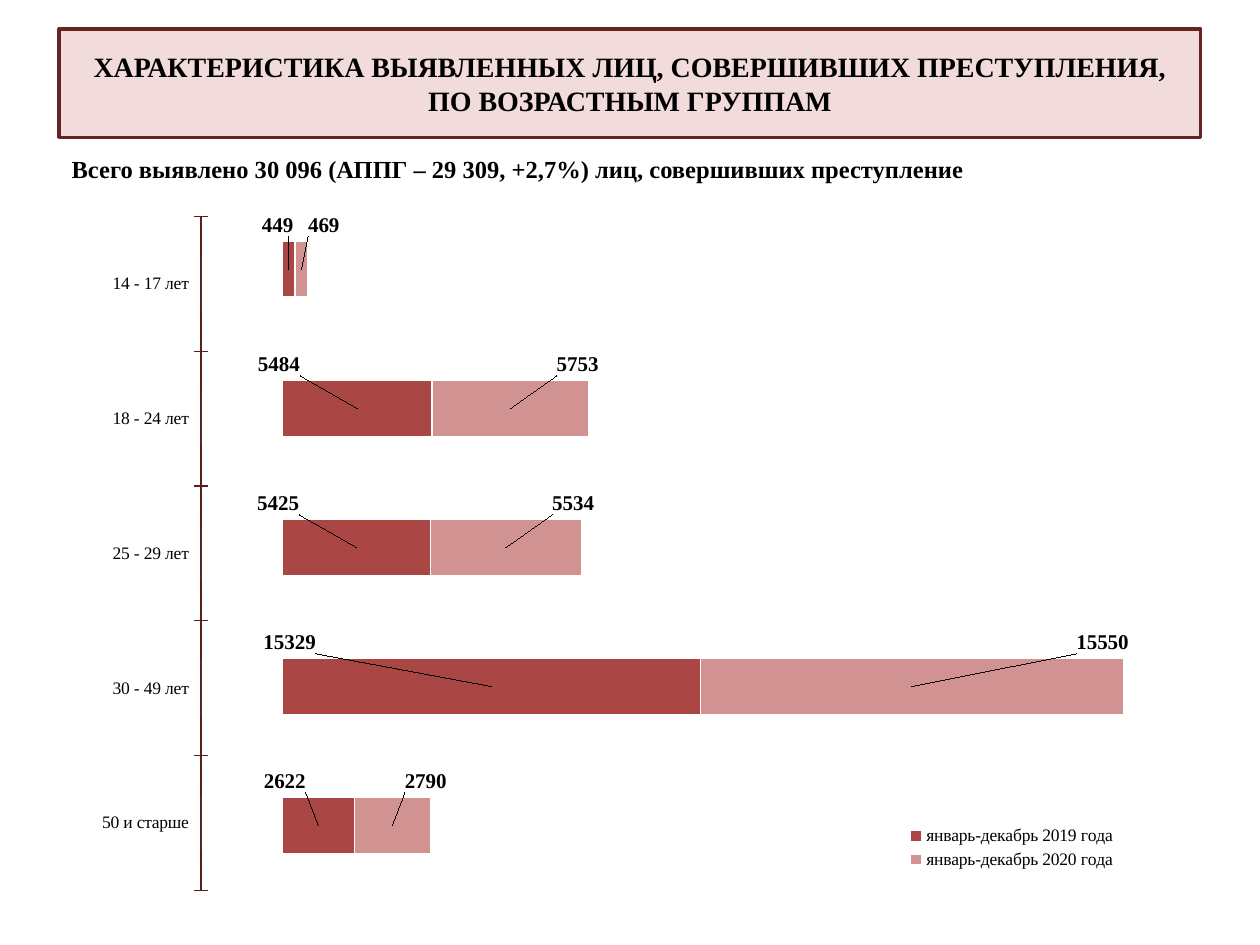
from lxml import etree
from pptx import Presentation
from pptx.chart.data import CategoryChartData
from pptx.dml.color import RGBColor
from pptx.enum.chart import XL_CHART_TYPE, XL_LEGEND_POSITION, XL_TICK_MARK
from pptx.enum.text import MSO_ANCHOR, MSO_AUTO_SIZE, PP_ALIGN
from pptx.oxml.ns import qn
from pptx.util import Inches, Pt

BAR = XL_CHART_TYPE.BAR_STACKED
RIGHT = XL_LEGEND_POSITION.RIGHT
CROSS = XL_TICK_MARK.CROSS
NONE = XL_TICK_MARK.NONE
MIDDLE = MSO_ANCHOR.MIDDLE
FIXED = MSO_AUTO_SIZE.NONE
CENTER = PP_ALIGN.CENTER
LEFT = PP_ALIGN.LEFT

COLORS = {
    "panel": "F2DCDB", "edge": "632523", "axis": "57201F", "text": "000000",
    "white": "FFFFFF", "past": "AA4643", "now": "D19392",
}
AGES = ["50 и старше", "30 - 49 лет", "25 - 29 лет", "18 - 24 лет", "14 - 17 лет"]
YEARS = [
    ("январь-декабрь 2019 года", [2622, 15329, 5425, 5484, 449], "past",
     [-0.03, -0.18, -0.07, -0.07, -0.01]),
    ("январь-декабрь 2020 года", [2790, 15550, 5534, 5753, 469], "now",
     [0.03, 0.17, 0.06, 0.06, 0.02]),
]
LIFT = -0.06


def color(name):
    return RGBColor.from_string(COLORS[name])


def layout(modes, frame):
    box = etree.Element(qn("c:layout"))
    manual = etree.SubElement(box, qn("c:manualLayout"))
    for key, val in {**modes, **dict(zip("xywh", frame))}.items():
        etree.SubElement(manual, qn(f"c:{key}"), val=str(val))
    return box


def clear():
    props = etree.Element(qn("c:spPr"))
    etree.SubElement(props, qn("a:noFill"))
    line = etree.SubElement(props, qn("a:ln"))
    etree.SubElement(line, qn("a:noFill"))
    return props


class Page:
    face = "Times New Roman"
    edges = {"xMode": "edge", "yMode": "edge"}
    inner = {"layoutTarget": "inner", **edges}

    def __init__(self, deck):
        self.slide = deck.slides.add_slide(deck.slide_layouts[5])

    def font(self, font, size, bold=False):
        for key, val in {"name": self.face, "size": Pt(size), "bold": bold}.items():
            setattr(font, key, val)
        font.color.rgb = color("text")

    def label(self, shape, text, size, align, after=0):
        frame = shape.text_frame
        frame.word_wrap = True
        frame.auto_size = FIXED
        para = frame.paragraphs[0]
        for key, val in {"alignment": align, "space_after": Pt(after)}.items():
            setattr(para, key, val)
        run = para.add_run()
        run.text = text
        self.font(run.font, size, True)
        return frame

    def title(self, text, *area):
        shape = self.slide.shapes.title
        for key, val in zip(("left", "top", "width", "height"), area):
            setattr(shape, key, Inches(val))
        geom = etree.SubElement(shape._element.spPr, qn("a:prstGeom"), prst="roundRect")
        etree.SubElement(geom, qn("a:avLst"))
        shape.fill.solid()
        shape.fill.fore_color.rgb = color("panel")
        shape.line.color.rgb = color("edge")
        shape.line.width = Pt(2)
        self.label(shape, text, 16, CENTER).vertical_anchor = MIDDLE

    def note(self, text, *area):
        box = self.slide.shapes.add_textbox(*map(Inches, area))
        self.label(box, text, 14, LEFT, 10)

    def bars(self, area, plot, cats, rows):
        data = CategoryChartData()
        data.categories = cats
        for name, vals in rows:
            data.add_series(name, vals)
        chart = self.slide.shapes.add_chart(BAR, *map(Inches, area), data).chart
        chart.has_title = False
        chart.has_legend = False
        self.font(chart.font, 10)
        for key, val in {"gap_width": 150, "overlap": 100, "vary_by_categories": False}.items():
            setattr(chart.plots[0], key, val)
        axis = chart.value_axis
        for key, val in {"visible": False, "has_major_gridlines": False,
                         "minimum_scale": 0, "maximum_scale": 35000}.items():
            setattr(axis, key, val)
        space = chart._chartSpace
        space.find(qn("c:chart")).addnext(clear())
        region = space.xpath("c:chart/c:plotArea")[0]
        for old in region.findall(qn("c:layout")):
            region.remove(old)
        region.insert(0, layout(self.inner, plot))
        region.append(clear())
        return chart

    def scale(self, area, plot, cats):
        rows = [(f"Series {n}", [0] * len(cats)) for n in (1, 2)]
        axis = self.bars(area, plot, cats, rows).category_axis
        axis.major_tick_mark = CROSS
        axis.minor_tick_mark = NONE
        self.font(axis.tick_labels.font, 10)
        axis.format.line.color.rgb = color("axis")
        axis.format.line.width = Pt(0.75)

    def totals(self, area, plot, cats, years, key):
        chart = self.bars(area, plot, cats, [year[:2] for year in years])
        chart.category_axis.visible = False
        for series, (name, vals, tint, shifts) in zip(chart.plots[0].series, years):
            series.format.fill.solid()
            series.format.fill.fore_color.rgb = color(tint)
            series.format.line.color.rgb = color("white")
            series.format.line.width = Pt(0.75)
            for n in range(len(vals)):
                self.font(series.points[n].data_label.font, 12, True)
            labels = series._element.xpath("c:dLbls/c:dLbl")
            for label, shift in zip(labels, shifts):
                label.find(qn("c:idx")).addnext(layout({}, (shift, LIFT)))
        chart.has_legend = True
        legend = chart.legend
        legend.position = RIGHT
        legend.include_in_layout = False
        self.font(legend.font, 10)
        node = legend._element
        for old in node.findall(qn("c:layout")):
            node.remove(old)
        node.find(qn("c:legendPos")).addnext(layout(self.edges, key))


def main():
    deck = Presentation()
    deck.slide_width = Inches(10)
    deck.slide_height = Inches(7.5)
    page = Page(deck)
    page.title("ХАРАКТЕРИСТИКА ВЫЯВЛЕННЫХ ЛИЦ, СОВЕРШИВШИХ ПРЕСТУПЛЕНИЯ, "
               "ПО ВОЗРАСТНЫМ ГРУППАМ", 0.47, 0.23, 9.06, 0.86)
    page.note("Всего выявлено 30 096 (АППГ – 29 309, +2,7%) лиц, совершивших преступление",
              0.47, 1.17, 9.06, 0.39)
    page.scale((0.03, 1.55, 2.61, 5.63), (0.6, 0.03, 0.34, 0.95), AGES)
    page.totals((0.91, 1.47, 8.9, 5.81), (0.15, 0.02, 0.85, 0.95),
                ["1", "2", "3", "4", "5"], YEARS, (0.7, 0.87, 0.2, 0.07))
    deck.save("out.pptx")


if __name__ == "__main__":
    main()
